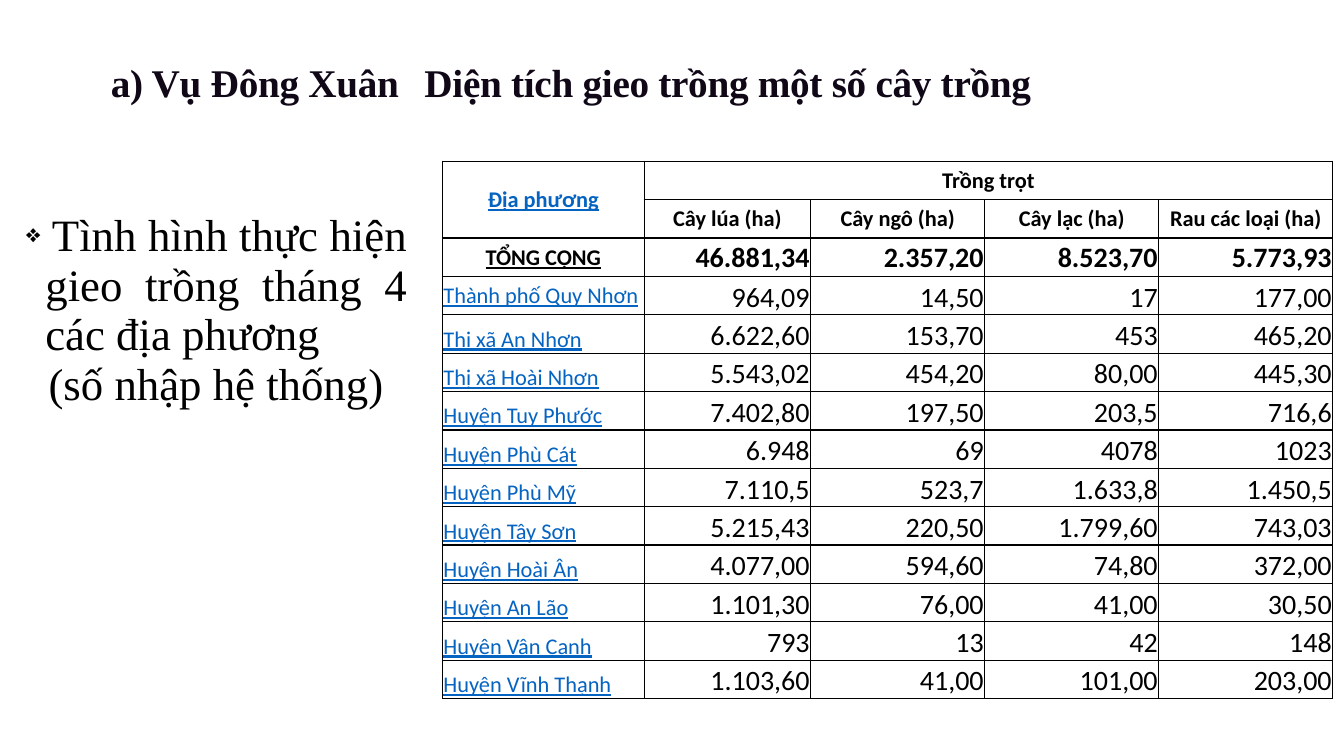
from dataclasses import dataclass

from lxml import etree
from pptx import Presentation
from pptx.dml.color import RGBColor
from pptx.enum.text import MSO_ANCHOR, PP_ALIGN
from pptx.oxml.ns import qn
from pptx.util import Pt

TOP, MIDDLE, BOTTOM = MSO_ANCHOR.TOP, MSO_ANCHOR.MIDDLE, MSO_ANCHOR.BOTTOM
LEFT, CENTER, RIGHT = PP_ALIGN.LEFT, PP_ALIGN.CENTER, PP_ALIGN.RIGHT
JUSTIFY = PP_ALIGN.JUSTIFY


@dataclass(frozen=True)
class Theme:
    """Hold the colours, fonts and type sizes of the slide."""
    ink: str = "000000"
    head: str = "100717"
    link: str = "0563C1"
    serif: str = "Times New Roman"
    sans: str = "Calibri"
    title: int = 28
    note: int = 32
    mark: int = 18
    label: int = 16
    value: int = 20


THEME = Theme()
TITLES = [("a) Vụ Đông Xuân", 0, 224), ("Diện tích gieo trồng một số cây trồng", 224, 454)]
WIDTHS = [144, 119, 124.3, 124.3, 124.3]
ROWS = [
    ["Địa phương", "Trồng trọt", "", "", ""],
    ["", "Cây lúa (ha)", "Cây ngô (ha)", "Cây lạc (ha)", "Rau các loại (ha)"],
    ["TỔNG CỘNG", "46.881,34", "2.357,20", "8.523,70", "5.773,93"],
    ["Thành phố Quy Nhơn", "964,09", "14,50", "17", "177,00"],
    ["Thị xã An Nhơn", "6.622,60", "153,70", "453", "465,20"],
    ["Thị xã Hoài Nhơn", "5.543,02", "454,20", "80,00", "445,30"],
    ["Huyện Tuy Phước", "7.402,80", "197,50", "203,5", "716,6"],
    ["Huyện Phù Cát", "6.948", "69", "4078", "1023"],
    ["Huyện Phù Mỹ", "7.110,5", "523,7", "1.633,8", "1.450,5"],
    ["Huyện Tây Sơn", "5.215,43", "220,50", "1.799,60", "743,03"],
    ["Huyện Hoài Ân", "4.077,00", "594,60", "74,80", "372,00"],
    ["Huyện An Lão", "1.101,30", "76,00", "41,00", "30,50"],
    ["Huyện Vân Canh", "793", "13", "42", "148"],
    ["Huyện Vĩnh Thạnh", "1.103,60", "41,00", "101,00", "203,00"],
]


def put(item, vals):
    """Set each named value on an object."""
    for name, val in vals.items():
        setattr(item, name, val)


def write(para, text, size, face, ink=THEME.ink, **more):
    """Add a formatted run to a paragraph."""
    run = para.add_run()
    run.text = text
    put(run.font, {"size": Pt(size), "name": face, **more})
    run.font.color.rgb = RGBColor.from_string(ink)
    return run


def add_grid(slide, box, rows, cols):
    """Add a table without banding or cell fills."""
    grid = slide.shapes.add_table(rows, cols, *map(Pt, box)).table
    put(grid, {"first_row": False, "horz_banding": False})
    for cell in grid.iter_cells():
        cell.fill.background()
    return grid


def rule(cell):
    """Draw a thin line on all four sides of a cell."""
    props = cell._tc.get_or_add_tcPr()
    for i, side in enumerate(("lnL", "lnR", "lnT", "lnB")):
        line = etree.Element(qn("a:" + side), w=str(Pt(1)))
        fill = etree.SubElement(line, qn("a:solidFill"))
        etree.SubElement(fill, qn("a:srgbClr"), val=THEME.ink)
        props.insert(i, line)


def add_titles(slide, box):
    """Place the two headings side by side."""
    x, y, _, high = box
    for i, (text, dx, wide) in enumerate(TITLES):
        spot = [Pt(v) for v in (x + dx, y, wide, high)]
        shape = slide.shapes.add_textbox(*spot) if i else slide.shapes.title
        put(shape, dict(zip(("left", "top", "width", "height"), spot)))
        frame = shape.text_frame
        put(frame, {"word_wrap": False, "vertical_anchor": TOP, "margin_left": Pt(7.9),
                    "margin_top": Pt(6.6)})
        para = frame.paragraphs[0]
        para.alignment = LEFT
        run = write(para, text, THEME.title, THEME.serif, THEME.head, bold=True)
        run._r.get_or_add_rPr().set("spc", "-20")


def add_crops(slide, box):
    """Place the table of crop areas by district."""
    grid = add_grid(slide, box, len(ROWS), len(WIDTHS))
    for col, wide in zip(grid.columns, WIDTHS):
        col.width = Pt(wide)
    for r, row in enumerate(ROWS):
        grid.rows[r].height = Pt(box[3] / len(ROWS))
        for c, text in enumerate(row):
            cell = grid.cell(r, c)
            rule(cell)
            put(cell, {"margin_left": Pt(0.7), "margin_right": Pt(0.7),
                       "margin_top": Pt(0.7), "margin_bottom": 0,
                       "vertical_anchor": MIDDLE if r < 3 or (r, c) == (3, 0) else BOTTOM})
            if not text:
                continue
            value = r > 1 and c > 0
            para = cell.text_frame.paragraphs[0]
            para.alignment = RIGHT if value else CENTER if r < 3 else LEFT
            write(para, text, THEME.value if value else THEME.label, THEME.sans,
                  THEME.link if c == 0 and r != 2 else THEME.ink,
                  bold=r < 3, underline=c == 0)
    grid.cell(0, 0).merge(grid.cell(1, 0))
    grid.cell(0, 1).merge(grid.cell(0, 4))


def add_note(slide, box):
    """Place the bulleted note in a table of one cell."""
    cell = add_grid(slide, box, 1, 1).cell(0, 0)
    cell.vertical_anchor = MIDDLE
    first = cell.text_frame.paragraphs[0]
    last = cell.text_frame.add_paragraph()
    for para, left, hang in ((first, 13.7, -13.7), (last, 16, 0)):
        props = para._p.get_or_add_pPr()
        put(para, {"alignment": JUSTIFY})
        props.set("marL", str(Pt(left)))
        props.set("indent", str(Pt(hang)))
    etree.SubElement(first._p.get_or_add_pPr(), qn("a:buChar"), char="❖")
    last.space_after = Pt(12)
    write(first, " ", THEME.mark, THEME.serif)
    write(first, "Tình hình thực hiện gieo trồng tháng 4 các địa phương", THEME.note, THEME.serif)
    write(last, "(số nhập hệ thống)", THEME.note, THEME.serif)


def main():
    """Build and save the slide."""
    deck = Presentation()
    put(deck, {"slide_width": Pt(960), "slide_height": Pt(540)})
    slide = deck.slides.add_slide(deck.slide_layouts[5])
    add_titles(slide, (71.3, 35.3, 678, 41))
    add_crops(slide, (316.1, 115.2, 635.9, 383.8))
    add_note(slide, (11.5, 122.4, 286.6, 199.4))
    deck.save("out.pptx")


if __name__ == "__main__":
    main()
